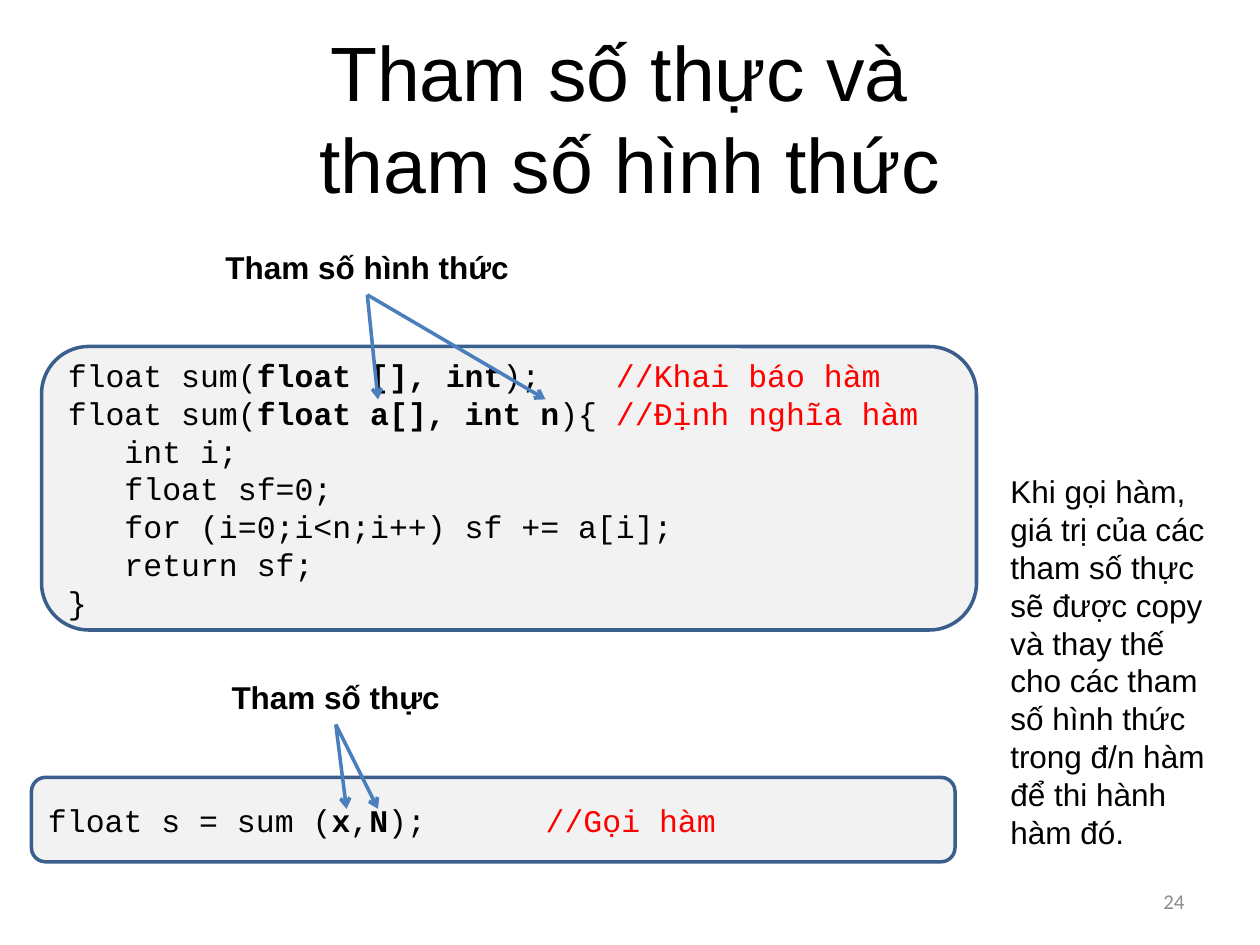
"""Build the slide on actual and formal function parameters."""
from dataclasses import dataclass

from lxml import etree
from pptx import Presentation
from pptx.dml.color import RGBColor
from pptx.enum.shapes import MSO_CONNECTOR, MSO_SHAPE
from pptx.enum.text import MSO_ANCHOR, PP_ALIGN
from pptx.oxml.ns import qn
from pptx.util import Inches, Pt

STRAIGHT = MSO_CONNECTOR.STRAIGHT
ROUNDED = MSO_SHAPE.ROUNDED_RECTANGLE
MIDDLE, TOP = MSO_ANCHOR.MIDDLE, MSO_ANCHOR.TOP
LEFT, CENTER, RIGHT = PP_ALIGN.LEFT, PP_ALIGN.CENTER, PP_ALIGN.RIGHT


@dataclass(frozen=True)
class Theme:
    black: RGBColor = RGBColor(0, 0, 0)
    comment: RGBColor = RGBColor(0xFF, 0, 0)
    gray: RGBColor = RGBColor(0x8C, 0x8C, 0x8C)
    panel: RGBColor = RGBColor(0xF2, 0xF2, 0xF2)
    outline: RGBColor = RGBColor(0x3A, 0x5F, 0x8C)
    arrow: RGBColor = RGBColor(0x4B, 0x7E, 0xBC)
    sans: str = "Arial"
    mono: str = "Courier New"
    number_font: str = "Calibri"
    title_size: int = 44
    body_size: int = 18
    number_size: int = 12
    line_width: int = 2


theme = Theme()


def style_font(font, name, size, color, bold=False):
    font.name, font.size, font.bold = name, Pt(size), bold
    font.color.rgb = color


def add_text(slide, box, text, name=theme.sans, size=theme.body_size,
             color=theme.black, bold=False, align=LEFT, anchor=TOP):
    shape = slide.shapes.add_textbox(*map(Inches, box))
    frame = shape.text_frame
    frame.word_wrap = True
    frame.vertical_anchor = anchor
    frame.text = text
    paragraph = frame.paragraphs[0]
    paragraph.alignment = align
    style_font(paragraph.runs[0].font, name, size, color, bold)
    return shape


presentation = Presentation()
presentation.slide_width, presentation.slide_height = Inches(10), Inches(7.5)
slide = presentation.slides.add_slide(presentation.slide_layouts[5])

title = slide.shapes.title
title.left, title.top = Inches(0.5), Inches(0.3)
title.width, title.height = Inches(9), Inches(1.25)
title.text_frame.text = "Tham số thực và \vtham số hình thức"
title.text_frame.vertical_anchor = MIDDLE
title_paragraph = title.text_frame.paragraphs[0]
title_paragraph.alignment = CENTER
for run in title_paragraph.runs:
    style_font(run.font, theme.sans, theme.title_size, theme.black)

add_text(slide, (7.17, 6.95, 2.33, 0.4), "24", theme.number_font,
         theme.number_size, theme.gray, align=RIGHT, anchor=MIDDLE)

PLAIN, BOLD, COMMENT = (theme.black, False), (theme.black, True), (theme.comment, False)
code_panels = [
    ((0.33, 2.75, 7.42, 2.25), [
        [("float sum(", PLAIN), ("float [], int", BOLD), (");    ", PLAIN),
         ("//Khai báo hàm", COMMENT)],
        [("float sum(", PLAIN), ("float a[], int n", BOLD), ("){ ", PLAIN),
         ("//Định nghĩa hàm", COMMENT)],
        [("   int i;", PLAIN)],
        [("   float sf=0;", PLAIN)],
        [("   for (i=0;i<n;i++) sf += a[i];", PLAIN)],
        [("   return sf;", PLAIN)],
        [("}", PLAIN)],
    ]),
    ((0.25, 6.17, 7.33, 0.67), [
        [("float s = sum (", PLAIN), ("x", BOLD), (",", PLAIN), ("N", BOLD),
         (");\t   ", PLAIN), ("//Gọi hàm", COMMENT)],
    ]),
]
for box, code_lines in code_panels:
    panel = slide.shapes.add_shape(ROUNDED, *map(Inches, box))
    panel.shadow.inherit = False
    panel.fill.solid()
    panel.fill.fore_color.rgb = theme.panel
    panel.line.color.rgb = theme.outline
    panel.line.width = Pt(theme.line_width)
    frame = panel.text_frame
    frame.word_wrap = True
    frame.vertical_anchor = MIDDLE
    for index, code_line in enumerate(code_lines):
        paragraph = frame.add_paragraph() if index else frame.paragraphs[0]
        paragraph.alignment = LEFT
        for text, (color, bold) in code_line:
            run = paragraph.add_run()
            run.text = text
            style_font(run.font, theme.mono, theme.body_size, color, bold)

labels = [
    ("Tham số hình thức", 1.58, 1.92, [(3, 3.17), (4.33, 3.17)]),
    ("Tham số thực", 1.33, 5.33, [(2.75, 6.42), (3, 6.42)]),
]
for text, left, top, targets in labels:
    label = add_text(slide, (left, top, 2.67, 0.42), text, bold=True, align=CENTER)
    for x, y in targets:
        arrow = slide.shapes.add_connector(
            STRAIGHT, Inches(left), Inches(top), Inches(x), Inches(y))
        arrow.begin_connect(label, 2)
        arrow.line.color.rgb = theme.arrow
        arrow.line.width = Pt(theme.line_width)
        etree.SubElement(arrow.line._get_or_add_ln(), qn("a:tailEnd"), type="arrow")
        etree.SubElement(arrow._element.spPr, qn("a:effectLst"))

add_text(slide, (7.92, 3.7, 1.83, 3.13),
         "Khi gọi hàm, giá trị của các tham số thực sẽ được copy và thay thế "
         "cho các tham số hình thức trong đ/n hàm để thi hành hàm đó.")

presentation.save("out.pptx")
